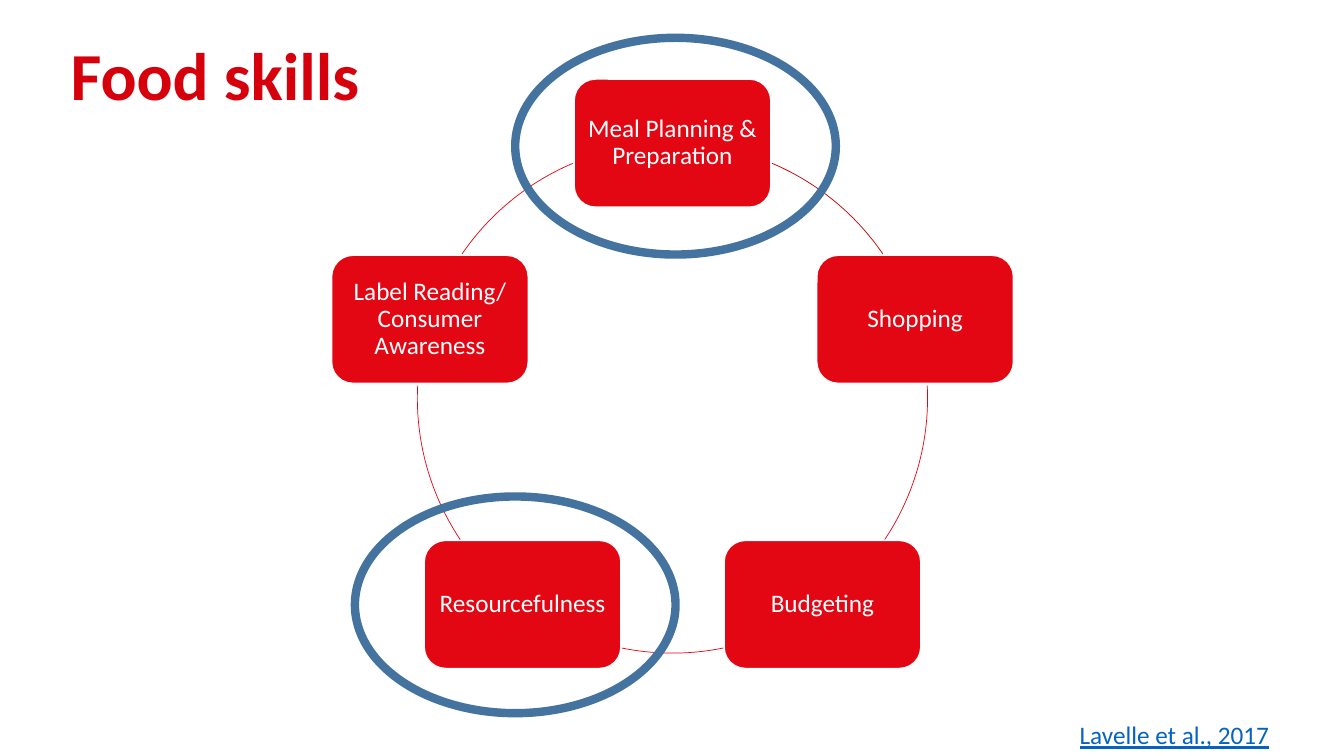
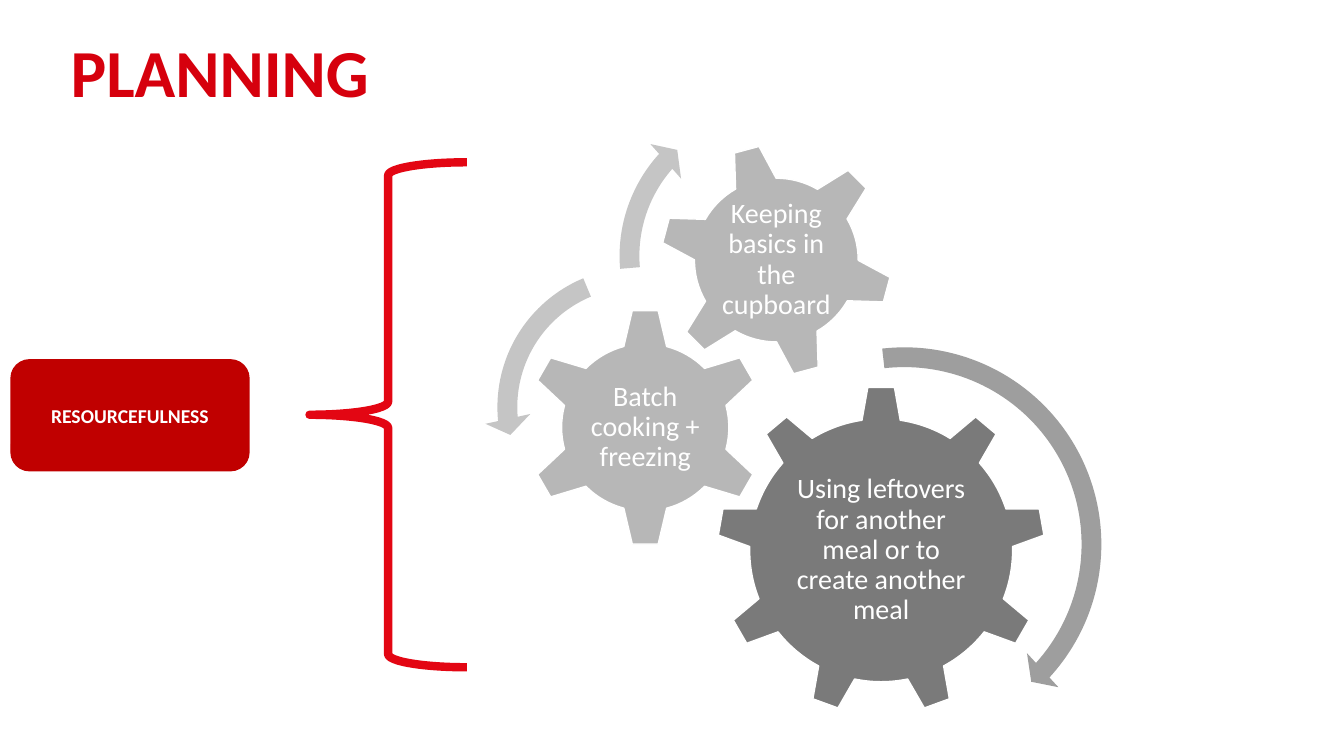
from dataclasses import dataclass
from math import cos, radians, sin

from pptx import Presentation
from pptx.dml.color import RGBColor
from pptx.enum.shapes import MSO_SHAPE
from pptx.enum.text import MSO_ANCHOR, MSO_AUTO_SIZE, PP_ALIGN
from pptx.util import Inches, Pt


@dataclass(frozen=True)
class Theme:
    font: str = "Calibri"
    title: str = "D6000D"
    red: str = "E30613"
    dark_red: str = "C00000"
    white: str = "FFFFFF"
    ring: str = "43739E"
    link: str = "0563C1"
    gear_dark: str = "7A7A7A"
    gear_light: str = "B7B7B7"
    arrow_dark: str = "9E9E9E"
    arrow_light: str = "C5C5C5"
    title_size: int = 48
    gear_size: int = 20
    body_size: int = 18
    label_size: int = 14
    thin: float = 0.5
    edge: float = 1
    heavy: float = 6


THEME = Theme()

# Slide 1: skills clockwise from the top of the cycle
SKILLS = [
    "Meal Planning & Preparation",
    "Shopping",
    "Budgeting",
    "Resourcefulness",
    "Label Reading/ Consumer Awareness",
]
CYCLE_CENTRE, CYCLE_RADIUS = (6.67, 3.95), 2.53
SKILL_SIZE = (1.95, 1.27)
# Start and end angle of the line after each skill, in degrees
CYCLE_ARCS = [(293, 325.6), (357.2, 33.7), (78.5, 101.5), (146.3, 182.8), (214.4, 247)]
RING_CENTRES, RING_SIZE = [(6.7, 1.45), (5.11, 6)], (3.18, 2.15)
CITATION = "Lavelle et al., 2017"

# Slide 2: text, shape, centre, diameter, rotation, text area, colour
GEARS = [
    ("Using leftovers for another meal or to create another meal",
     MSO_SHAPE.GEAR_9, (8.74, 5.46), 3.26, 0, (1.95, 1.68), THEME.gear_dark),
    ("Batch cooking + freezing",
     MSO_SHAPE.GEAR_6, (6.4, 4.24), 2.37, 0, (1.18, 1.17), THEME.gear_light),
    ("Keeping basics in the cupboard",
     MSO_SHAPE.GEAR_6, (7.7, 2.58), 2.32, 345, (1.3, 1.3), THEME.gear_light),
]
# Shape, centre, diameter, adjustments, colour
TURN_ARROWS = [
    (MSO_SHAPE.CIRCULAR_ARROW, (8.97, 5.4), 4.17,
     (0.047, 2.99, 25.393, 158.123, 0.055), THEME.arrow_dark),
    (MSO_SHAPE.LEFT_CIRCULAR_ARROW, (6.32, 4.04), 3.03,
     (0.065, 4.3, 104.891, 148.378, 0.075), THEME.arrow_light),
    (MSO_SHAPE.CIRCULAR_ARROW, (7.65, 2.54), 3.27,
     (0.06, 3.941, 133.138, 105.082, 0.07), THEME.arrow_light),
]


def around(centre, size):
    """Left, top, width and height of an area with the given centre."""
    (x, y), (width, height) = centre, size
    return x - width / 2, y - height / 2, width, height


def write(frame, text, size, color, align=PP_ALIGN.CENTER, inset=0.1,
          anchor=MSO_ANCHOR.MIDDLE, spacing=0.9, bold=False, underline=False):
    frame.word_wrap = True
    frame.auto_size = MSO_AUTO_SIZE.NONE
    frame.vertical_anchor = anchor
    frame.margin_left = frame.margin_right = Inches(inset)
    frame.margin_top = frame.margin_bottom = Inches(min(inset, 0.07))
    para = frame.paragraphs[0]
    para.text = text
    para.alignment = align
    para.line_spacing = spacing
    font = para.font
    font.name, font.size = THEME.font, Pt(size)
    font.bold, font.underline = bold, underline
    font.color.rgb = RGBColor.from_string(color)


def add_shape(page, kind, area, fill=None, line=None, width=THEME.edge, adjustments=()):
    shape = page.shapes.add_shape(kind, *map(Inches, area))
    shape.shadow.inherit = False
    if fill:
        shape.fill.solid()
        shape.fill.fore_color.rgb = RGBColor.from_string(fill)
    else:
        shape.fill.background()
    if line:
        shape.line.color.rgb = RGBColor.from_string(line)
        shape.line.width = Pt(width)
    else:
        shape.line.fill.background()
    for index, value in enumerate(adjustments):
        shape.adjustments[index] = value
    return shape


def add_text(page, area, text, size, color, **style):
    box = page.shapes.add_textbox(*map(Inches, area))
    write(box.text_frame, text, size, color, **style)


def add_page(deck, title, top):
    page = deck.slides.add_slide(deck.slide_layouts[5])
    holder = page.shapes.title
    holder.left, holder.top, holder.width, holder.height = map(Inches, (0.6, top, 7.49, 0.9))
    write(holder.text_frame, title, THEME.title_size, THEME.title,
          align=PP_ALIGN.LEFT, anchor=MSO_ANCHOR.TOP, bold=True)
    holder.text_frame.margin_top = Inches(0.05)
    return page


def build_skills(deck):
    page = add_page(deck, "Food skills", 0.37)

    # Cycle of skills, each followed by its line
    step = 360 / len(SKILLS)
    circle = around(CYCLE_CENTRE, (2 * CYCLE_RADIUS, 2 * CYCLE_RADIUS))
    for index, (skill, arc) in enumerate(zip(SKILLS, CYCLE_ARCS)):
        angle = radians(index * step - 90)
        centre = (CYCLE_CENTRE[0] + CYCLE_RADIUS * cos(angle),
                  CYCLE_CENTRE[1] + CYCLE_RADIUS * sin(angle))
        box = add_shape(page, MSO_SHAPE.ROUNDED_RECTANGLE, around(centre, SKILL_SIZE),
                        THEME.red, THEME.white)
        write(box.text_frame, skill, THEME.body_size, THEME.white, inset=0.07)
        # Arc adjustments count 0.6 per degree
        add_shape(page, MSO_SHAPE.ARC, circle, line=THEME.red if index else THEME.dark_red,
                  width=THEME.thin, adjustments=[degrees * 0.6 for degrees in arc])

    # Citation and highlight rings
    add_text(page, (10.61, 7.07, 2.46, 0.4), CITATION, THEME.body_size, THEME.link,
             align=PP_ALIGN.LEFT, anchor=MSO_ANCHOR.TOP, spacing=1, underline=True)
    for centre in RING_CENTRES:
        add_shape(page, MSO_SHAPE.OVAL, around(centre, RING_SIZE),
                  line=THEME.ring, width=THEME.heavy)


def build_planning(deck):
    page = add_page(deck, "PLANNING", 0.34)

    # Gears with upright text
    for text, kind, centre, diameter, rotation, text_size, color in GEARS:
        gear = add_shape(page, kind, around(centre, (diameter, diameter)), color, THEME.white)
        gear.rotation = rotation
        add_text(page, around(centre, text_size), text, THEME.gear_size, THEME.white, inset=0.03)

    # Turning arrows
    for kind, centre, diameter, adjustments, color in TURN_ARROWS:
        add_shape(page, kind, around(centre, (diameter, diameter)), color,
                  adjustments=adjustments)

    # Brace and the skill it explains
    add_shape(page, MSO_SHAPE.LEFT_BRACE, (3.07, 1.61, 1.56, 5.01),
              line=THEME.red, width=THEME.heavy)
    label = add_shape(page, MSO_SHAPE.ROUNDED_RECTANGLE, (0.11, 3.57, 2.36, 1.1),
                      THEME.dark_red, THEME.dark_red)
    write(label.text_frame, "RESOURCEFULNESS", THEME.label_size, THEME.white,
          spacing=1, bold=True)


def main():
    deck = Presentation()
    deck.slide_width, deck.slide_height = Inches(13.33), Inches(7.5)
    build_skills(deck)
    build_planning(deck)
    deck.save("out.pptx")


if __name__ == "__main__":
    main()
